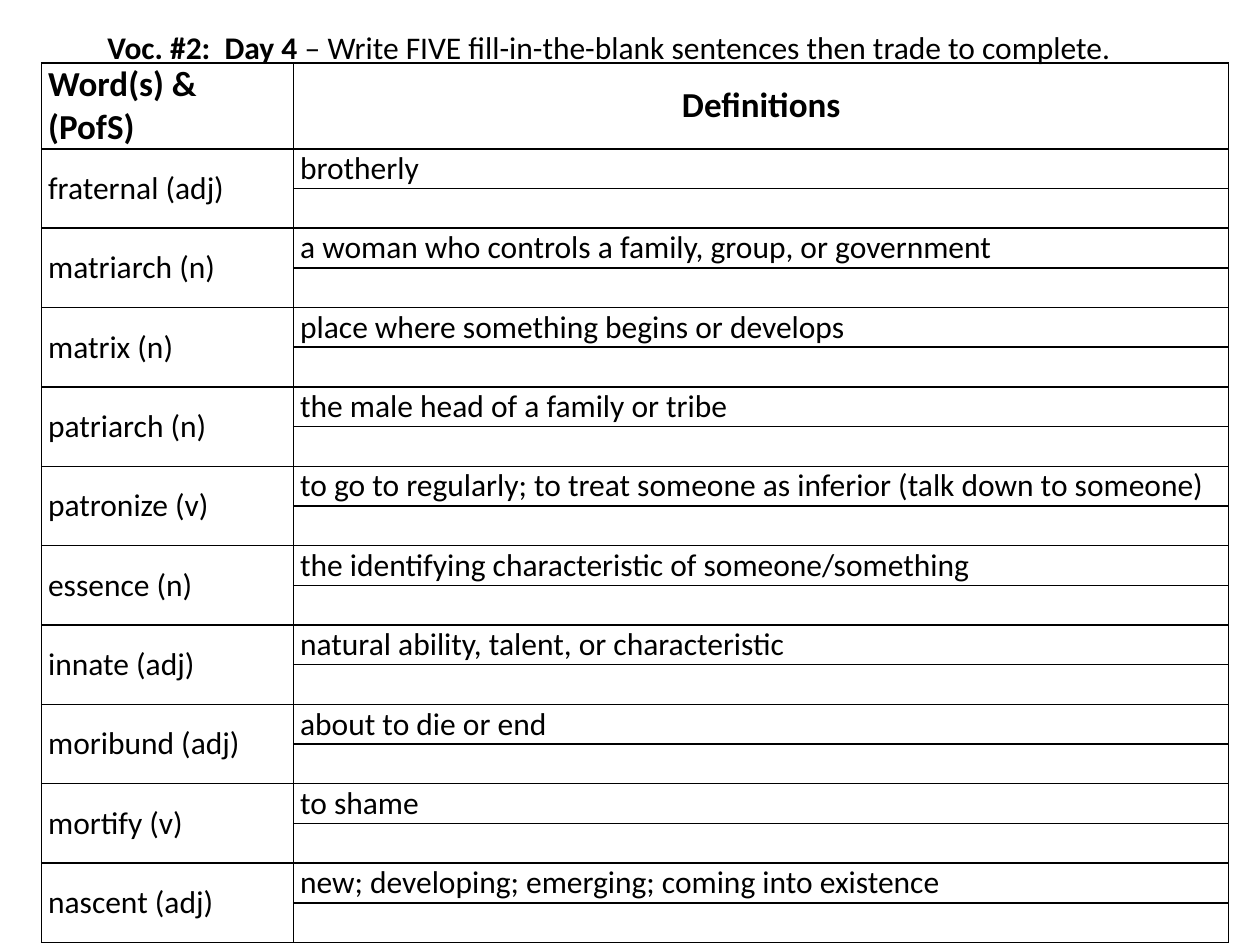
from lxml import etree
from pptx import Presentation
from pptx import util as u
from pptx.dml.color import RGBColor
from pptx.enum import text
from pptx.oxml import ns

BLACK = RGBColor(0x00, 0x00, 0x00)
FONT = "Calibri"
HEADERS = ("Word(s) & (PofS)", "Definitions")
VOCABULARY = [
    ("fraternal (adj)", "brotherly"),
    ("matriarch (n)", "a woman who controls a family, group, or government"),
    ("matrix (n)", "place where something begins or develops"),
    ("patriarch (n)", "the male head of a family or tribe"),
    ("patronize (v)", "to go to regularly; to treat someone as inferior (talk down to someone)"),
    ("essence (n)", "the identifying characteristic of someone/something"),
    ("innate (adj)", "natural ability, talent, or characteristic"),
    ("moribund (adj)", "about to die or end"),
    ("mortify (v)", "to shame"),
    ("nascent (adj)", "new; developing; emerging; coming into existence"),
]


class SlideBuilder:
    def __init__(self, prs):
        self.s = prs.slides.add_slide(prs.slide_layouts[5])

    def font(self, p, size, bold=None):
        p.font.name, p.font.size, p.font.bold = FONT, u.Pt(size), bold
        p.font.color.rgb = BLACK

    def title(self, lead, rest, x, y, w, h):
        sp = self.s.shapes.title
        sp.left, sp.top, sp.width, sp.height = map(u.Cm, (x, y, w, h))
        tf = sp.text_frame
        tf.word_wrap = True
        tf.auto_size = text.MSO_AUTO_SIZE.NONE
        tf.vertical_anchor = text.MSO_ANCHOR.MIDDLE
        p = tf.paragraphs[0]
        p.alignment = text.PP_ALIGN.LEFT
        self.font(p, 18)
        p._p.get_or_add_pPr().set("indent", str(u.Cm(1.27)))
        for words, bold in ((lead, True), (rest, False)):
            r = p.add_run()
            r.text, r.font.bold = words, bold

    def cell(self, cell, words="", size=18, bold=False, align=text.PP_ALIGN.LEFT):
        cell.margin_left = cell.margin_right = u.Cm(0.13)
        cell.margin_top = cell.margin_bottom = 0
        cell.vertical_anchor = text.MSO_ANCHOR.MIDDLE
        cell.text = words
        p = cell.text_frame.paragraphs[0]
        p.alignment = align
        self.font(p, size, bold)
        self.borders(cell)
        cell.fill.background()

    def borders(self, cell):
        tcPr = cell._tc.get_or_add_tcPr()
        for side in ("a:lnL", "a:lnR", "a:lnT", "a:lnB"):
            ln = etree.SubElement(tcPr, ns.qn(side), w=str(u.Pt(1)))
            fill = etree.SubElement(ln, ns.qn("a:solidFill"))
            etree.SubElement(fill, ns.qn("a:srgbClr"), val=str(BLACK))

    def vocabulary_table(self, x, y, widths, header_h, row_h):
        """Each word spans two rows: its definition and a blank line."""
        n = 1 + 2 * len(VOCABULARY)
        height = header_h + row_h * (n - 1)
        frame = self.s.shapes.add_table(n, 2, *map(u.Cm, (x, y, sum(widths), height)))
        table = frame.table
        table.first_row = table.horz_banding = False
        for column, width in zip(table.columns, widths):
            column.width = u.Cm(width)
        for i, row in enumerate(table.rows):
            row.height = u.Cm(row_h if i else header_h)

        aligns = (text.PP_ALIGN.LEFT, text.PP_ALIGN.CENTER)
        for col, (header, align) in enumerate(zip(HEADERS, aligns)):
            self.cell(table.cell(0, col), header, 20, True, align)
        for i, (word, definition) in enumerate(VOCABULARY):
            top = 1 + 2 * i
            self.cell(table.cell(top, 0), word)
            self.cell(table.cell(top, 1), definition)
            for col in range(2):
                self.cell(table.cell(top + 1, col))
            table.cell(top, 0).merge(table.cell(top + 1, 0))


def main():
    prs = Presentation()
    prs.slide_width, prs.slide_height = u.Cm(25.4), u.Cm(19.05)
    b = SlideBuilder(prs)
    b.title("Voc. #2:  Day 4 ",
            "– Write FIVE fill-in-the-blank sentences then trade to complete.",
            0.64, 0.43, 22.43, 1.02)
    b.vocabulary_table(0.84, 1.27, (5.08, 18.85), 1.72, 0.8)
    prs.save("out.pptx")


if __name__ == "__main__":
    main()
